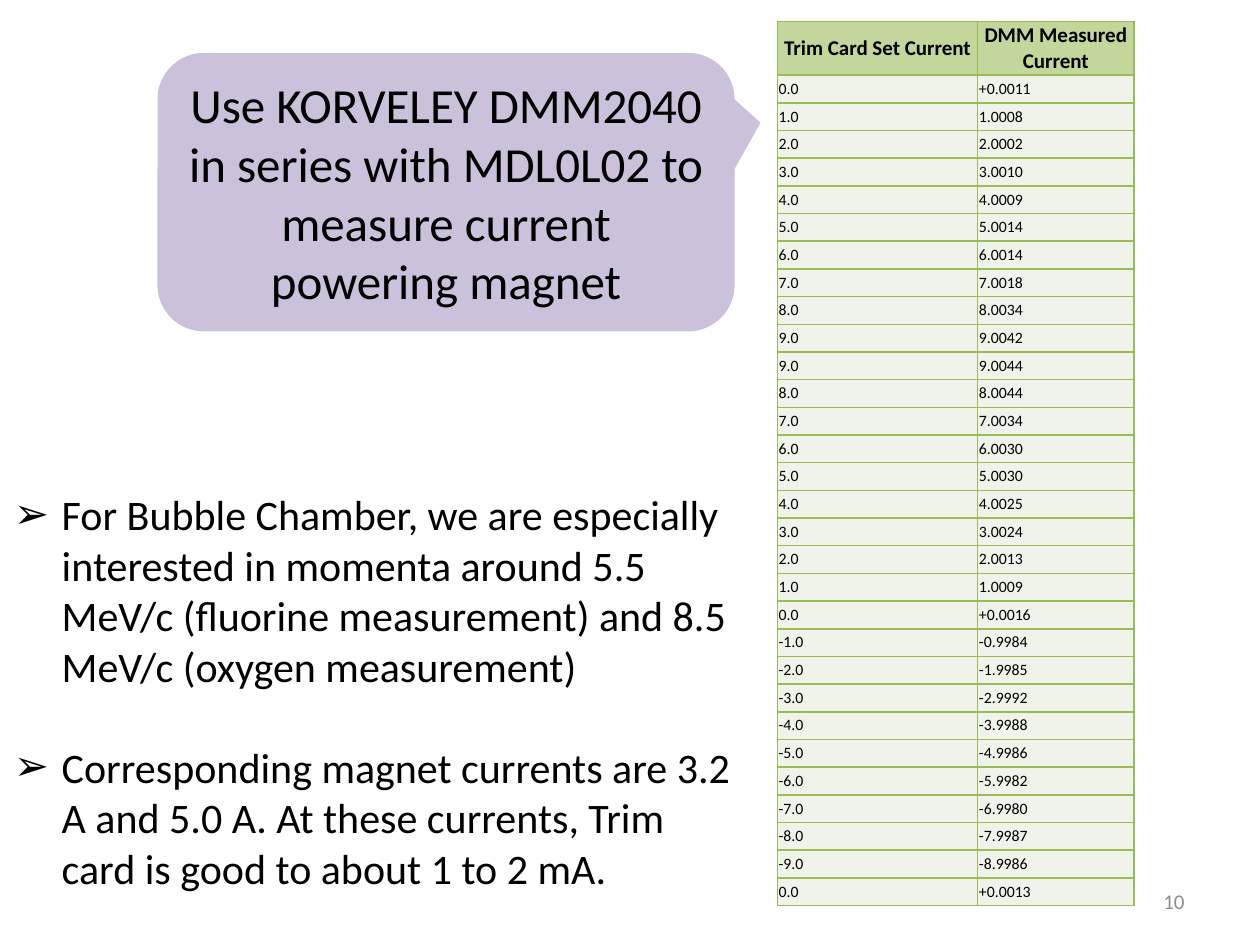
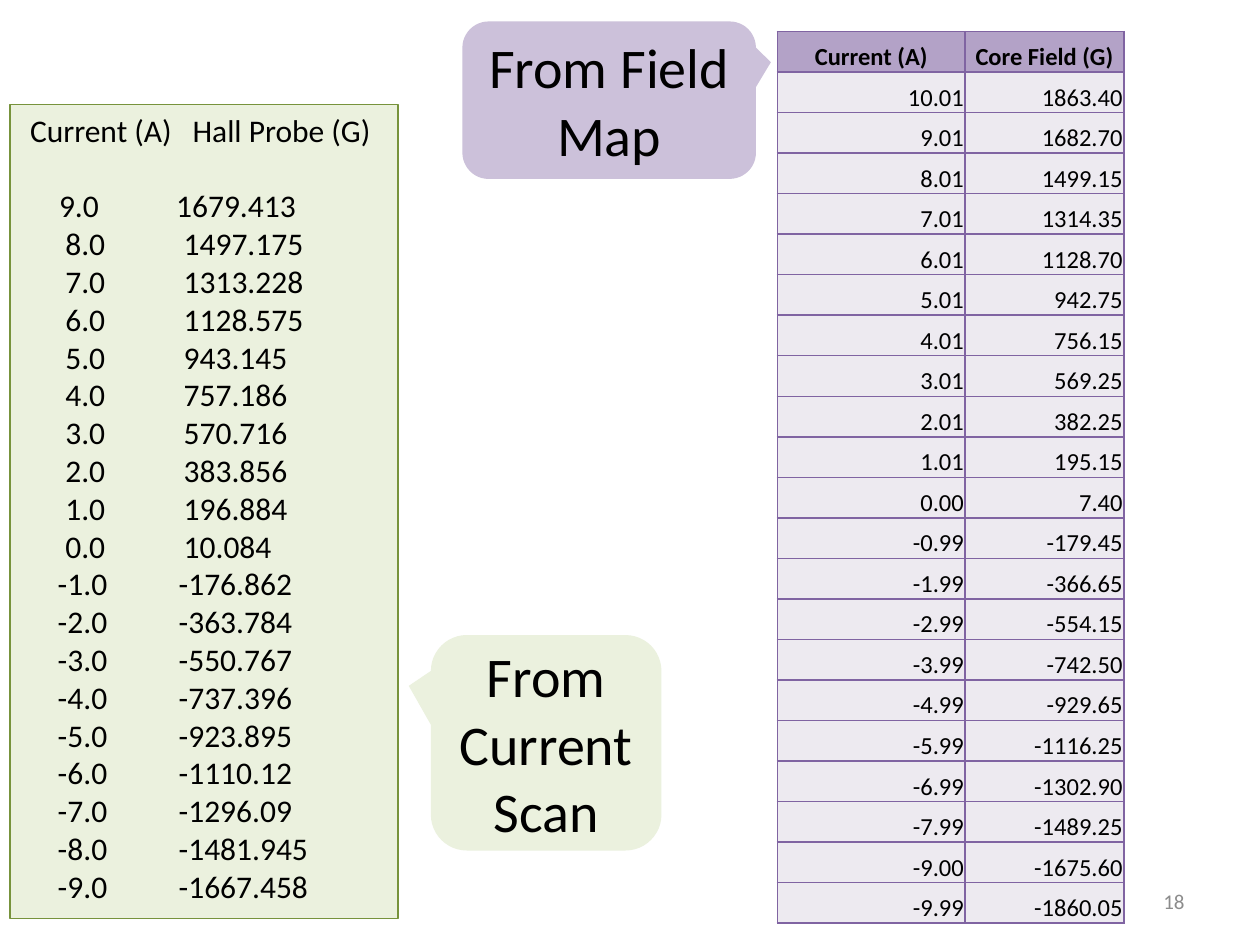
"""Build two slides comparing magnet currents and fields in tables."""
from lxml import etree
from pptx import Presentation
from pptx.dml.color import RGBColor
from pptx.enum.shapes import MSO_SHAPE as SHAPE
from pptx.enum.text import MSO_ANCHOR as ANCHOR, MSO_AUTO_SIZE as AUTO, PP_ALIGN as ALIGN
from pptx.oxml.ns import qn
from pptx.util import Inches, Pt

BLACK = RGBColor(0x00, 0x00, 0x00)
GREY = RGBColor(0x8C, 0x8C, 0x8C)
LILAC = RGBColor(0xCC, 0xC1, 0xDA)
PURPLE = RGBColor(0x80, 0x64, 0xA2)
PURPLE_HEAD = RGBColor(0xB3, 0xA2, 0xC7)
PURPLE_PALE = RGBColor(0xED, 0xEA, 0xF0)
GREEN = RGBColor(0x9B, 0xBB, 0x59)
GREEN_HEAD = RGBColor(0xC3, 0xD6, 0x9B)
GREEN_PALE = RGBColor(0xEF, 0xF3, 0xEA)
GREEN_BOX = RGBColor(0xEB, 0xF1, 0xDE)
GREEN_EDGE = RGBColor(0x77, 0x93, 0x3C)


def style(p, size, align=ALIGN.LEFT, color=BLACK, bold=False):
    """Format one paragraph."""
    p.alignment = align
    p.font.name = "Calibri"
    p.font.size = Pt(size)
    p.font.bold = bold
    p.font.color.rgb = color


def add_grid(s, top, widths, heights, rows, colors, sizes, align, anchor, bottom):
    """Add a bordered two-column table with a header row."""
    border, head, pale = colors
    frame = s.shapes.add_table(len(rows), 2, Inches(6.17), Inches(top),
                               Inches(sum(widths)), Inches(sum(heights)))
    table = frame.table
    table.horz_banding = False
    for column, width in zip(table.columns, widths):
        column.width = Inches(width)
    for i, values in enumerate(rows):
        table.rows[i].height = Inches(heights[i])
        for j, value in enumerate(values):
            cell = table.cell(i, j)
            cell.margin_left = cell.margin_right = cell.margin_top = Inches(0.01)
            cell.margin_bottom = Inches(bottom)
            cell.vertical_anchor = anchor
            cell.text = value
            style(cell.text_frame.paragraphs[0], sizes[i > 0],
                  align if i else ALIGN.CENTER, bold=i == 0)
            cell.fill.solid()
            cell.fill.fore_color.rgb = pale if i else head
            tc_pr = cell._tc.get_or_add_tcPr()
            for k, side in enumerate(("lnL", "lnR", "lnT", "lnB")):
                ln = etree.Element(qn(f"a:{side}"), w=str(Pt(1)))
                fill = etree.SubElement(ln, qn("a:solidFill"))
                etree.SubElement(fill, qn("a:srgbClr"), val=str(border))
                tc_pr.insert(k, ln)


prs = Presentation()
prs.slide_width, prs.slide_height = Inches(10), Inches(7.5)
trim = prs.slides.add_slide(prs.slide_layouts[1])
field = prs.slides.add_slide(prs.slide_layouts[6])
scan_currents = list(range(9, -10, -1))

measured = """+0.0011 1.0008 2.0002 3.0010 4.0009 5.0014 6.0014 7.0018 8.0034 9.0042
9.0044 8.0044 7.0034 6.0030 5.0030 4.0025 3.0024 2.0013 1.0009 +0.0016
-0.9984 -1.9985 -2.9992 -3.9988 -4.9986 -5.9982 -6.9980 -7.9987 -8.9986 +0.0013""".split()
set_currents = [f"{n:.1f}" for n in [*range(10), *scan_currents, 0]]
rows = [("Trim Card Set Current", "DMM Measured Current"), *zip(set_currents, measured)]
add_grid(trim, 0.17, (1.59, 1.24), [0.42] + [0.22] * 30, rows,
         (GREEN, GREEN_HEAD, GREEN_PALE), (12, 9), ALIGN.LEFT, ANCHOR.MIDDLE, 0.01)

core_currents = """10.01 9.01 8.01 7.01 6.01 5.01 4.01 3.01 2.01 1.01 0.00
-0.99 -1.99 -2.99 -3.99 -4.99 -5.99 -6.99 -7.99 -9.00 -9.99""".split()
core_fields = """1863.40 1682.70 1499.15 1314.35 1128.70 942.75 756.15 569.25 382.25 195.15 7.40
-179.45 -366.65 -554.15 -742.50 -929.65 -1116.25 -1302.90 -1489.25 -1675.60 -1860.05""".split()
rows = [("Current (A)", "Core Field (G)"), *zip(core_currents, core_fields)]
add_grid(field, 0.25, (1.49, 1.26), [7.08 / 22] * 22, rows,
         (PURPLE, PURPLE_HEAD, PURPLE_PALE), (14, 14), ALIGN.RIGHT, ANCHOR.BOTTOM, 0)

callouts = [
    (trim, (1.25, 0.42, 4.58, 2.21), (0.545, -0.249), LILAC, 28,
     "Use KORVELEY DMM2040 in series with MDL0L02 to measure current powering magnet"),
    (field, (3.67, 0.17, 2.33, 1.25), (0.551, -0.241), LILAC, 32, "From Field Map"),
    (field, (3.42, 5.04, 1.83, 1.71), (-0.596, -0.264), GREEN_BOX, 32, "From Current\nScan"),
]
for s, box, tip, color, size, text in callouts:
    sp = s.shapes.add_shape(SHAPE.ROUNDED_RECTANGULAR_CALLOUT, *map(Inches, box))
    sp.shadow.inherit = False
    sp.adjustments[0], sp.adjustments[1] = tip
    sp.fill.solid()
    sp.fill.fore_color.rgb = color
    sp.line.fill.background()
    tf = sp.text_frame
    tf.word_wrap = True
    tf.vertical_anchor = ANCHOR.MIDDLE
    tf.text = text
    for p in tf.paragraphs:
        style(p, size, ALIGN.CENTER)

title = trim.shapes.title
title.element.getparent().remove(title.element)
body = trim.placeholders[1]
body.left, body.top, body.width, body.height = map(Inches, (0.01, 3.83, 5.99, 3.33))
tf = body.text_frame
tf.auto_size = AUTO.NONE
tf.text = (
    "For Bubble Chamber, we are especially interested in momenta around 5.5 MeV/c "
    "(fluorine measurement) and 8.5 MeV/c (oxygen measurement)\n"
    "Corresponding magnet currents are 3.2 A and 5.0 A. At these currents, Trim card "
    "is good to about 1 to 2 mA."
)
for p, gap in zip(tf.paragraphs, (0, 29)):
    p.space_before = Pt(gap)
    p_pr = p._p.get_or_add_pPr()
    p_pr.set("marL", str(Inches(0.38)))
    p_pr.set("indent", str(-Inches(0.38)))
    etree.SubElement(p_pr, qn("a:buChar"), char="➢")
    style(p, 24)

scan_fields = """1679.413 1497.175 1313.228 1128.575 943.145 757.186 570.716 383.856 196.884 10.084
-176.862 -363.784 -550.767 -737.396 -923.895 -1110.12 -1296.09 -1481.945 -1667.458""".split()
scan_rows = [("Current (A)", "Hall Probe (G)", (0.06, 1.35))]
for n, value in zip(scan_currents, scan_fields):
    stops = (0.29, 1.22) if n == 9 else (0.34, 1.28) if n >= 0 else (0.28, 1.24)
    scan_rows.append((f"{n:.1f}", value, stops))
sp = field.shapes.add_shape(SHAPE.RECTANGLE, *map(Inches, (0.08, 0.83, 3.08, 6.46)))
sp.shadow.inherit = False
sp.fill.solid()
sp.fill.fore_color.rgb = GREEN_BOX
sp.line.color.rgb = GREEN_EDGE
sp.line.width = Pt(0.75)
tf = sp.text_frame
tf.word_wrap = True
tf.vertical_anchor = ANCHOR.TOP
tf.text = "\n".join(f"\t{current}\t{value}" for current, value, stops in scan_rows)
for p, (current, value, stops) in zip(tf.paragraphs, scan_rows):
    tabs = etree.SubElement(p._p.get_or_add_pPr(), qn("a:tabLst"))
    for stop in stops:
        etree.SubElement(tabs, qn("a:tab"), pos=str(Inches(stop)), algn="l")
    style(p, 18)
tf.paragraphs[0].space_after = Pt(21.6)

for s, number in ((trim, "10"), (field, "18")):
    sp = s.shapes.add_textbox(*map(Inches, (7.17, 6.95, 2.33, 0.4)))
    tf = sp.text_frame
    tf.word_wrap = True
    tf.vertical_anchor = ANCHOR.MIDDLE
    tf.text = number
    style(tf.paragraphs[0], 12, ALIGN.RIGHT, GREY)

prs.save("out.pptx")
